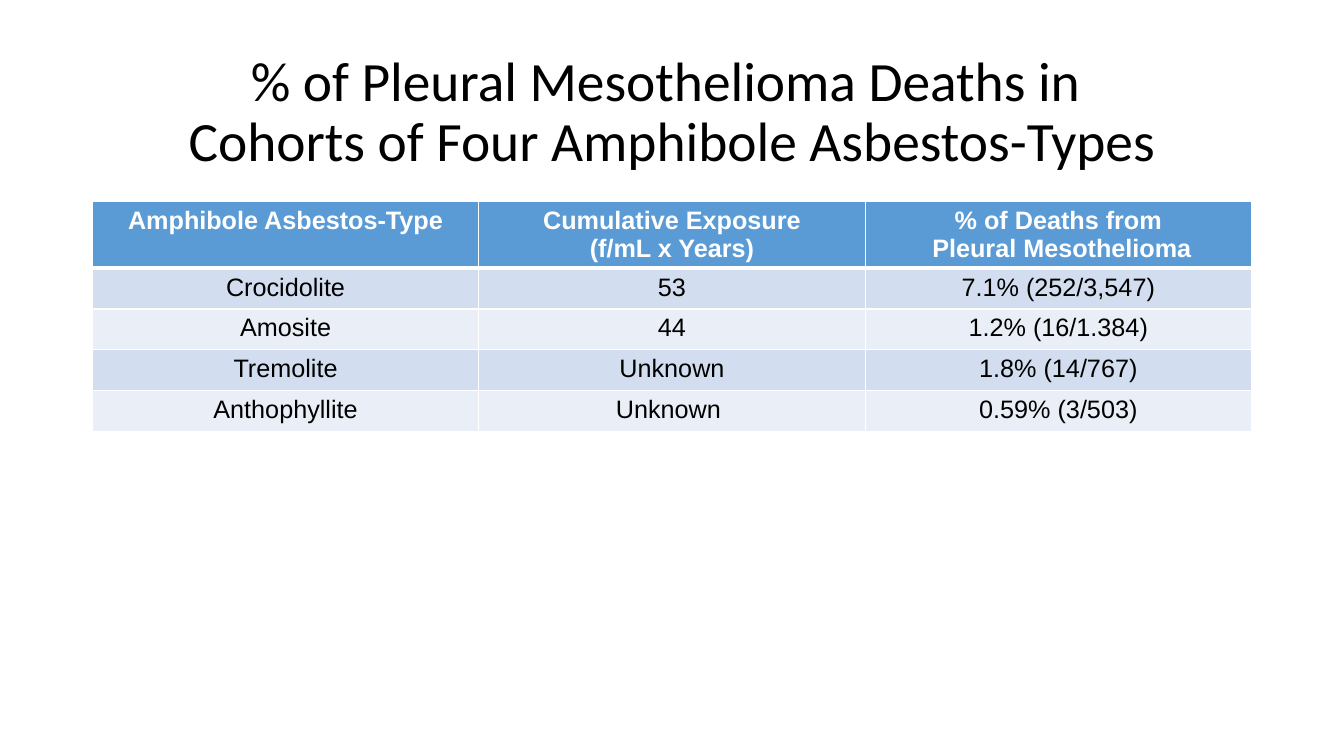
from lxml import etree
from pptx import Presentation
from pptx import util as u
from pptx.dml.color import RGBColor
from pptx.enum import text
from pptx.oxml.ns import qn

COLUMNS, ROWS = 160, 90
MARGIN = 11
CONTENT_WIDTH = COLUMNS - 2 * MARGIN

TITLE = "% of Pleural Mesothelioma Deaths in \vCohorts of Four Amphibole Asbestos-Types"
DEATHS = [
    ["Amphibole Asbestos-Type", "Cumulative Exposure\n(f/mL x Years)",
     "% of Deaths from\n Pleural Mesothelioma"],
    ["Crocidolite", "53", "7.1% (252/3,547)"],
    ["Amosite", "44", "1.2% (16/1.384)"],
    ["Tremolite", "Unknown", "1.8% (14/767)"],
    ["Anthophyllite", "Unknown ", "0.59% (3/503)"],
]


def rgb(color):
    return RGBColor.from_string(color)


def write(tf, content, font="Arial", size=18, color="000000", bold=False, spacing=None):
    """Fill a text frame with centred text; a newline starts a paragraph."""
    tf.text = content
    for p in tf.paragraphs:
        p.alignment = text.PP_ALIGN.CENTER
        if spacing:
            p.line_spacing = spacing
        for r in p.runs:
            r.font.name, r.font.size, r.font.bold = font, u.Pt(size), bold
            r.font.color.rgb = rgb(color)


def add_borders(cell, color, bottom):
    """Draw 1 pt cell edges, with the bottom edge at its own width."""
    tc_pr = cell._tc.get_or_add_tcPr()
    for side, width in zip("LRTB", (1, 1, 1, bottom)):
        ln = etree.SubElement(tc_pr, qn(f"a:ln{side}"), w=str(u.Pt(width)))
        fill = etree.SubElement(ln, qn("a:solidFill"))
        etree.SubElement(fill, qn("a:srgbClr"), val=color)


class Deck:
    """Style and current slide; lengths are in grid columns and rows."""
    header, bands, line = "5B9BD5", ("D2DEEF", "EAEFF7"), "FFFFFF"

    def __init__(self):
        self.prs = Presentation()
        self.prs.slide_width, self.prs.slide_height = u.Inches(13.333), u.Inches(7.5)
        self.s = self.prs.slides.add_slide(self.prs.slide_layouts[5])

    def x(self, columns):
        return round(self.prs.slide_width * columns / COLUMNS)

    def y(self, rows):
        return round(self.prs.slide_height * rows / ROWS)

    def title(self, content, top, height):
        sp = self.s.shapes.title
        sp.left, sp.top = self.x(MARGIN), self.y(top)
        sp.width, sp.height = self.x(CONTENT_WIDTH), self.y(height)
        tf = sp.text_frame
        tf.word_wrap, tf.auto_size = True, text.MSO_AUTO_SIZE.NONE
        tf.vertical_anchor = text.MSO_ANCHOR.MIDDLE
        write(tf, content, font="Calibri", size=39.6, spacing=0.9)

    def table(self, data, top, header_height, row_height):
        height = header_height + row_height * (len(data) - 1)
        table = self.s.shapes.add_table(
            len(data), len(data[0]), self.x(MARGIN), self.y(top),
            self.x(CONTENT_WIDTH), self.y(height)).table
        for i, values in enumerate(data):
            head = i == 0
            table.rows[i].height = self.y(header_height if head else row_height)
            for cell, value in zip(table.rows[i].cells, values):
                add_borders(cell, self.line, bottom=3 if head else 1)
                cell.fill.solid()
                cell.fill.fore_color.rgb = rgb(self.header if head else self.bands[(i - 1) % 2])
                write(cell.text_frame, value, bold=head,
                      color="FFFFFF" if head else "000000")


def main():
    deck = Deck()
    deck.title(TITLE, top=4.8, height=17.4)
    deck.table(DEATHS, top=24, header_height=7.8, row_height=4.87)
    deck.prs.save("out.pptx")


if __name__ == "__main__":
    main()
